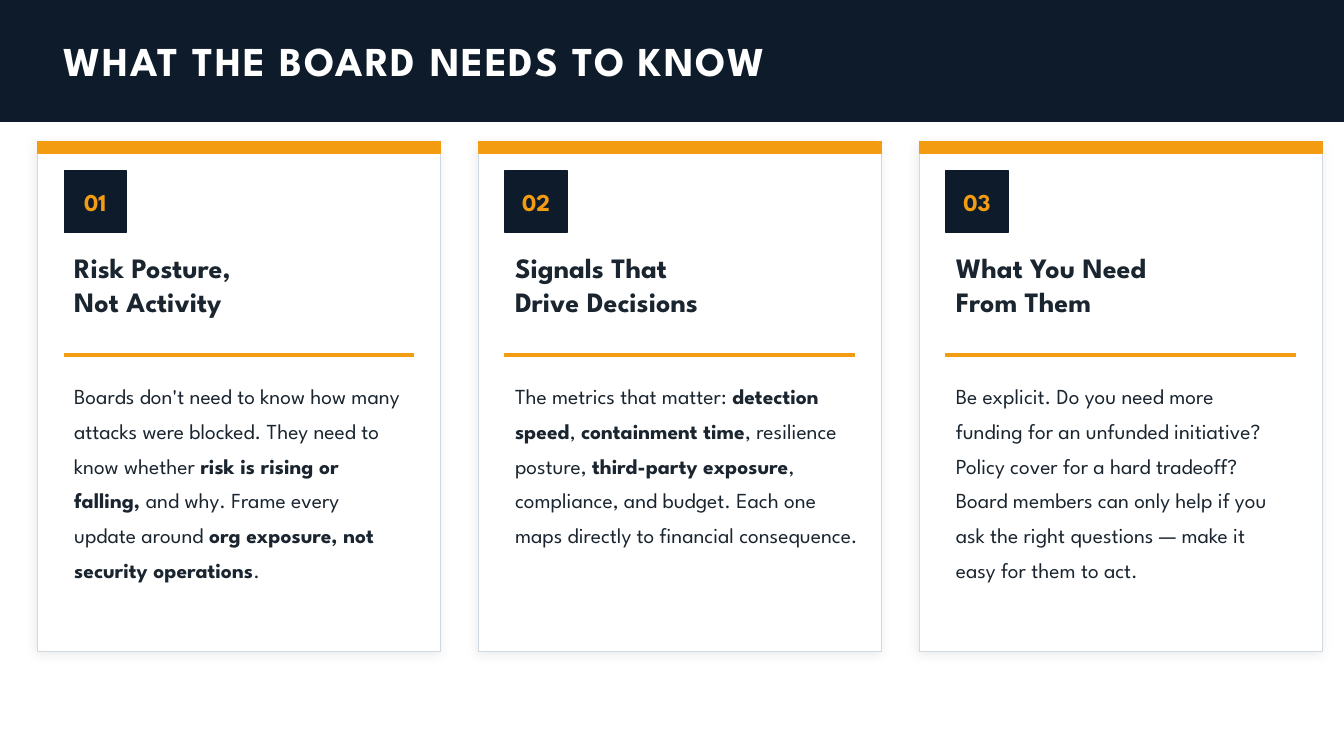
import pptx
import pptx.dml.color
import pptx.enum.shapes
import pptx.enum.text
import pptx.oxml
import pptx.util
from pptx.util import Cm

FONT = "League Spartan"
NAVY, AMBER, INK, WHITE, BORDER = "0D1B2A", "F39C12", "1A252F", "FFFFFF", "D0D8E0"
ALIGN = pptx.enum.text.PP_ALIGN
ANCHOR = pptx.enum.text.MSO_ANCHOR

CARD_LEFT, CARD_TOP, CARD_PITCH = 0.95, 3.56, 11.11
CARD_WIDTH, CARD_HEIGHT, PADDING = 10.16, 12.87, 0.67
INNER_WIDTH = 8.81

# Each card: heading lines, body runs as (text, bold), body width
CARDS = [
    (["Risk Posture,", "Not Activity"],
     [("Boards don't need to know how many attacks were blocked. "
       "They need to know whether ", False),
      ("risk is rising or falling, ", True),
      ("and why. Frame every update around ", False),
      ("org exposure, not security operations", True),
      (".", False)],
     INNER_WIDTH),
    (["Signals That", "Drive Decisions"],
     [("The metrics that matter: ", False),
      ("detection speed", True),
      (", ", False),
      ("containment time", True),
      (", resilience posture, ", False),
      ("third-party exposure", True),
      (", compliance, and budget. Each one maps directly to "
       "financial consequence.", False)],
     9.17),
    (["What You Need", "From Them"],
     [("Be explicit. Do you need more funding for an unfunded initiative? "
       "Policy cover for a hard tradeoff? Board members can only help if you "
       "ask the right questions — make it easy for them to act.", False)],
     INNER_WIDTH),
]


def rgb(hex_colour):
    return pptx.dml.color.RGBColor.from_string(hex_colour)


def add_run(p, text, size, colour, bold=False):
    r = p.add_run()
    r.text = text
    r.font.name = FONT
    r.font.size = pptx.util.Pt(size)
    r.font.bold = bold
    r.font.color.rgb = rgb(colour)
    return r


def add_rect(s, left, top, width, height, fill, line=None, line_width=1):
    """Add a plain rectangle; the outline takes the fill colour by default."""
    sp = s.shapes.add_shape(pptx.enum.shapes.MSO_SHAPE.RECTANGLE,
                            Cm(left), Cm(top), Cm(width), Cm(height))
    sp.shadow.inherit = False
    sp.fill.solid()
    sp.fill.fore_color.rgb = rgb(fill)
    sp.line.color.rgb = rgb(line or fill)
    sp.line.width = pptx.util.Pt(line_width)
    return sp


def add_soft_shadow(sp):
    effects = sp.element.spPr.find(pptx.oxml.ns.qn("a:effectLst"))
    effects.append(pptx.oxml.parse_xml(
        f'<a:outerShdw {pptx.oxml.ns.nsdecls("a")} blurRad="101600" dist="25400" '
        'dir="8100000" algn="bl" rotWithShape="0"><a:srgbClr val="000000">'
        '<a:alpha val="8000"/></a:srgbClr></a:outerShdw>'))


def add_text(s, left, top, width, height, paragraphs, size, spacing=None):
    """Add a text box; each paragraph is a list of (text, bold) runs."""
    tf = s.shapes.add_textbox(Cm(left), Cm(top), Cm(width), Cm(height)).text_frame
    tf.word_wrap = True
    for i, runs in enumerate(paragraphs):
        p = tf.add_paragraph() if i else tf.paragraphs[0]
        if spacing:
            p.line_spacing = spacing
        for text, bold in runs:
            add_run(p, text, size, INK, bold)


def add_badge(s, left, top, text):
    sp = add_rect(s, left, top, 1.56, 1.56, NAVY)
    tf = sp.text_frame
    tf.margin_left = tf.margin_right = tf.margin_top = tf.margin_bottom = 0
    tf.vertical_anchor = ANCHOR.MIDDLE
    p = tf.paragraphs[0]
    p.alignment = ALIGN.CENTER
    add_run(p, text, 17.3, AMBER, True)


def add_header(s):
    title = s.shapes.title
    band = add_rect(s, 0, 0, 33.87, 3.05, NAVY)
    title.element.addprevious(band.element)
    title.left, title.top = Cm(1.35), Cm(0)
    title.width, title.height = Cm(30.48), Cm(3.05)
    tf = title.text_frame
    tf.auto_size = pptx.enum.text.MSO_AUTO_SIZE.NONE
    tf.vertical_anchor = ANCHOR.MIDDLE
    p = tf.paragraphs[0]
    p.alignment = ALIGN.LEFT
    r = add_run(p, "WHAT THE BOARD NEEDS TO KNOW", 29.3, WHITE, True)
    r.font._element.set("spc", "130")


def add_card(s, index, heading, body, body_width):
    left = CARD_LEFT + index * CARD_PITCH
    inner = left + PADDING
    card = add_rect(s, left, CARD_TOP, CARD_WIDTH, CARD_HEIGHT, WHITE, BORDER, 0.75)
    add_soft_shadow(card)
    add_rect(s, left, CARD_TOP, CARD_WIDTH, 0.3, AMBER)
    add_badge(s, inner, 4.3, f"{index + 1:02d}")
    add_text(s, inner, 6.2, INNER_WIDTH, 2.44, [[(line, True)] for line in heading], 20)
    add_rect(s, inner, 8.91, INNER_WIDTH, 0.07, AMBER)
    add_text(s, inner, 9.31, body_width, 6.5, [body], 15.3, 1.35)


def main():
    prs = pptx.Presentation()
    prs.slide_width, prs.slide_height = Cm(33.87), Cm(19.05)
    s = prs.slides.add_slide(prs.slide_layouts[5])
    add_header(s)
    for index, (heading, body, body_width) in enumerate(CARDS):
        add_card(s, index, heading, body, body_width)
    prs.save("out.pptx")


if __name__ == "__main__":
    main()
